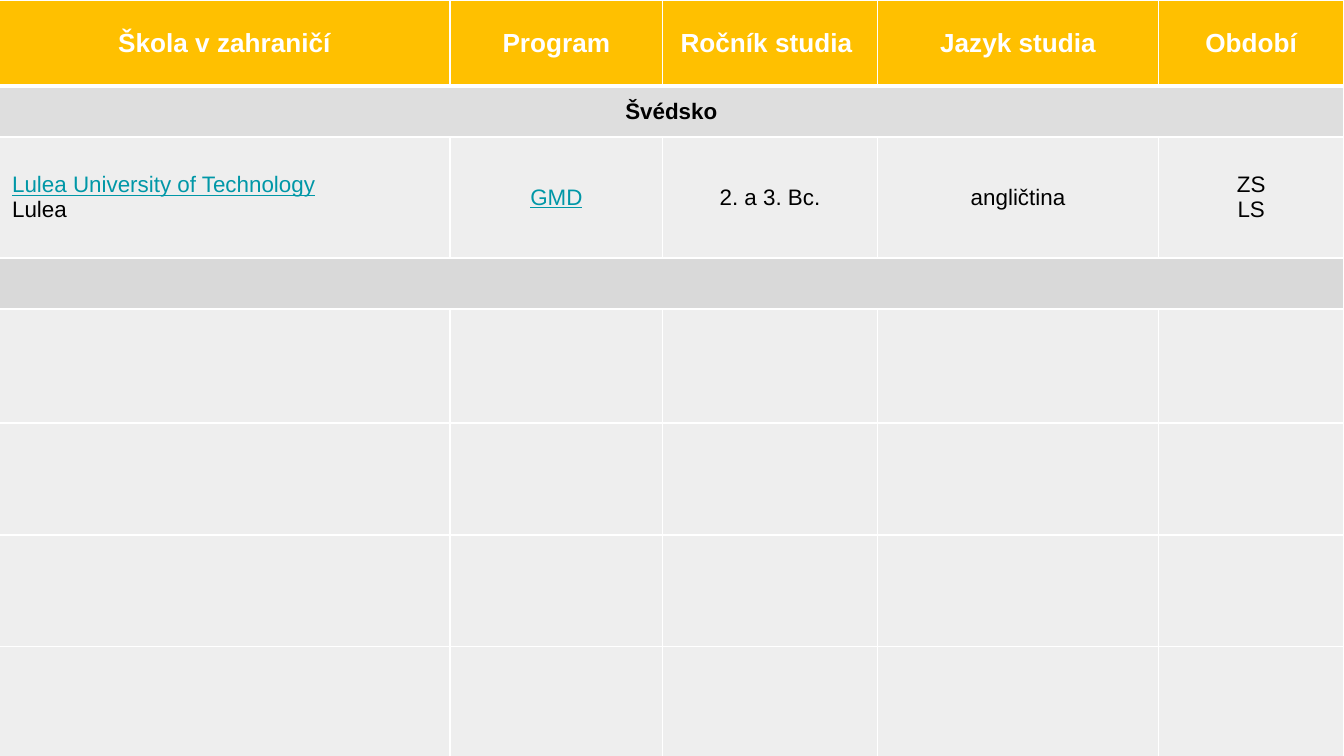
from lxml.etree import SubElement
from pptx import Presentation
from pptx.dml.color import RGBColor
from pptx.enum.text import MSO_ANCHOR, PP_ALIGN
from pptx.oxml.ns import qn
from pptx.util import Emu, Inches, Pt

SLIDE_WIDTH = 10
SLIDE_HEIGHT = SLIDE_WIDTH * 9 / 16
COLUMN_WIDTHS = [3.36, 1.58, 1.6, 2.09, 1.38]
ROW_HEIGHTS = [0.64, 0.38, 0.9, 0.38, 0.85, 0.83, 0.83, 0.83]
HEADINGS = ["Škola v zahraničí", "Program", "Ročník studia ", "Jazyk studia", "Období"]
SCHOOL = ["Lulea University of Technology\nLulea", "GMD", "2. a 3. Bc.", "angličtina", "ZS\nLS"]
LINKED_TEXTS = {"Lulea University of Technology", "GMD"}


def color(hex_string):
    """Return the colour for a hex string."""
    return RGBColor.from_string(hex_string)


class ExchangeSlide:
    """Holds the style and the current slide."""

    font = "Arial"
    white, black, link = "FFFFFF", "000000", "0097A7"
    header, country, divider, body = "FFC000", "DEDEDE", "D9D9D9", "EEEEEE"

    def __init__(self, presentation):
        """Add a blank slide to the presentation."""
        self.slide = presentation.slides.add_slide(presentation.slide_layouts[6])

    def table(self, left, top, widths, heights):
        """Add a table with the given column and row sizes in inches."""
        frame = self.slide.shapes.add_table(
            len(heights), len(widths), Inches(left), Inches(top),
            Inches(sum(widths)), Inches(sum(heights)))
        for column, width in zip(frame.table.columns, widths):
            column.width = Inches(width)
        for row, height in zip(frame.table.rows, heights):
            row.height = Inches(height)
        return frame.table

    def borders(self, cell, top=1, bottom=1):
        """Draw white lines on all four sides of a cell."""
        properties = cell._tc.get_or_add_tcPr()
        for side, width in zip("LRTB", (1, 1, top, bottom)):
            line = SubElement(properties, qn(f"a:ln{side}"), w=str(Emu(Pt(width))))
            fill = SubElement(line, qn("a:solidFill"))
            SubElement(fill, qn("a:srgbClr"), val=self.white)

    def cell(self, cell, text, fill, size=12, bold=False, text_color=black, align=PP_ALIGN.CENTER):
        """Fill a cell and format its text."""
        cell.fill.solid()
        cell.fill.fore_color.rgb = color(fill)
        cell.vertical_anchor = MSO_ANCHOR.MIDDLE
        cell.margin_top = cell.margin_bottom = Inches(0.03)
        cell.text_frame.text = text
        for paragraph in cell.text_frame.paragraphs:
            paragraph.alignment = align
            linked = paragraph.text in LINKED_TEXTS
            for run in paragraph.runs:
                run.font.name = self.font
                run.font.size = Pt(size)
                run.font.bold = bold
                run.font.underline = linked
                run.font.color.rgb = color(self.link if linked else text_color)

    def row(self, table, index, texts, fill, top=1, bottom=1, **style):
        """Write one table row, with the first column left-aligned in body rows."""
        for column, text in enumerate(texts):
            cell = table.cell(index, column)
            self.borders(cell, top, bottom)
            left = column == 0 and fill == self.body
            align = PP_ALIGN.LEFT if left else PP_ALIGN.CENTER
            self.cell(cell, text, fill, align=align, **style)

    def band(self, table, index, text, fill, top=1):
        """Write one row merged across all columns."""
        last = len(table.columns) - 1
        self.row(table, index, [text] + [""] * last, fill, top=top, bold=True)
        table.cell(index, 0).merge(table.cell(index, last))


def main():
    """Build the slide with the table of schools abroad."""
    presentation = Presentation()
    presentation.slide_width = Inches(SLIDE_WIDTH)
    presentation.slide_height = Inches(SLIDE_HEIGHT)
    page = ExchangeSlide(presentation)
    table = page.table(-0.01, 0, COLUMN_WIDTHS, ROW_HEIGHTS)
    page.row(table, 0, HEADINGS, page.header, bottom=3, size=14, bold=True, text_color=page.white)
    page.band(table, 1, "Švédsko", page.country, top=3)
    page.row(table, 2, SCHOOL, page.body)
    page.band(table, 3, "", page.divider)
    for index in range(4, len(ROW_HEIGHTS)):
        page.row(table, index, [""] * len(COLUMN_WIDTHS), page.body)
    presentation.save("out.pptx")


if __name__ == "__main__":
    main()
